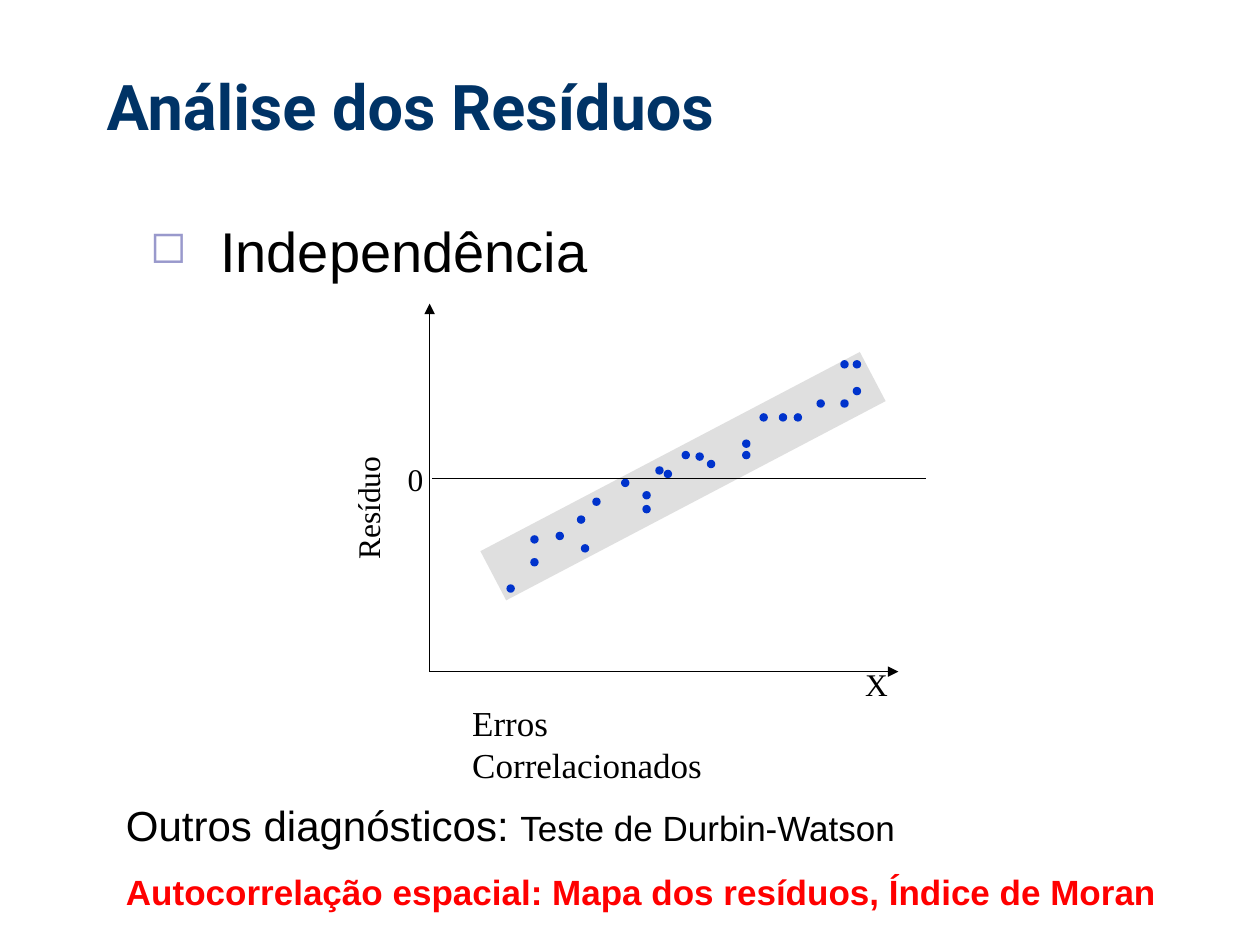
from lxml import etree
from pptx import Presentation
from pptx.dml.color import RGBColor
from pptx.enum import shapes, text
from pptx.oxml import ns
from pptx.util import Cm, Pt

NAVY = RGBColor(0x00, 0x33, 0x66)
LILAC = RGBColor(0x99, 0x99, 0xCC)
BLUE = RGBColor(0x00, 0x33, 0xCC)
GREY = RGBColor(0xC0, 0xC0, 0xC0)
RED = RGBColor(0xFF, 0x00, 0x00)
BLACK = RGBColor(0x00, 0x00, 0x00)
SERIF = "Times New Roman"
DOT = 0.17
RESIDUALS = [
    (2.54, 4.6), (4.29, 3.78), (2.03, 5.13), (4.29, 4.06), (8.28, 1.14),
    (3.86, 3.53), (4.55, 3.28), (4.72, 3.35), (5.08, 2.97), (7.04, 2.21),
    (3.28, 3.91), (7.34, 2.21), (2.03, 4.67), (5.36, 3.0), (8.28, 1.93),
    (8.53, 1.68), (8.53, 1.14), (6.3, 2.74), (6.65, 2.21), (6.3, 2.97),
    (5.59, 3.15), (2.97, 4.27), (7.8, 1.93), (3.05, 4.85), (1.55, 5.66),
]


def add_child(parent, tag, **attributes):
    return etree.SubElement(parent, ns.qn(tag), attributes)


def style(run, size, font, color=BLACK, bold=False):
    run.font.size = Pt(size)
    run.font.name = font
    run.font.color.rgb = color
    run.font.bold = bold


def add_text(slide, box, words, size, font, color=BLACK, bold=False, wrap=True):
    label = slide.shapes.add_textbox(*map(Cm, box))
    frame = label.text_frame
    frame.word_wrap = wrap
    frame.text = words
    style(frame.paragraphs[0].runs[0], size, font, color, bold)
    return label


def add_filled(slide, kind, box, color):
    shape = slide.shapes.add_shape(kind, *map(Cm, box))
    shape.shadow.inherit = False
    shape.fill.solid()
    shape.fill.fore_color.rgb = color
    shape.line.fill.background()
    return shape


def add_line(slide, start, end, arrow=False):
    line = slide.shapes.add_connector(
        shapes.MSO_CONNECTOR.STRAIGHT, *map(Cm, start + end))
    line.line.color.rgb = BLACK
    line.line.width = Pt(0.75)
    if arrow:
        add_child(line.line._get_or_add_ln(), "a:tailEnd", type="triangle")
    add_child(line._element.spPr, "a:effectLst")


def add_title(slide, box):
    title = add_text(slide, box, "Análise dos Resíduos", 36, "Roboto", NAVY, True)
    title.text_frame.vertical_anchor = text.MSO_ANCHOR.MIDDLE


def add_topic(slide, box):
    topic = add_text(slide, box, "Independência", 32, "Arial")
    properties = topic.text_frame.paragraphs[0]._p.get_or_add_pPr()
    properties.set("marL", str(Cm(2.69)))
    properties.set("indent", str(Cm(-1.42)))
    color = add_child(properties, "a:buClr")
    add_child(color, "a:srgbClr", val=str(LILAC))
    add_child(properties, "a:buSzPct", val="80000")
    add_child(properties, "a:buChar", char="◻")


def add_residual_plot(slide, box):
    left, top, width, height = box

    def place(x, y, *size):
        return (left + x, top + y) + size

    add_text(slide, place(8.53, 7.16, 0.97, 1.02), "X", 18, SERIF, wrap=False)
    band = add_filled(slide, shapes.MSO_SHAPE.RECTANGLE,
                      place(0.79, 2.92, 8.64, 1.12), GREY)
    band.rotation = 332.3
    add_child(band.fill._xPr.find(".//" + ns.qn("a:srgbClr")), "a:alpha", val="50000")
    for x, y in RESIDUALS:
        add_filled(slide, shapes.MSO_SHAPE.FLOWCHART_CONNECTOR,
                   place(x, y, DOT, DOT), BLUE)

    add_line(slide, place(0.05, 3.53), place(10.01, 3.53))
    add_line(slide, place(0, height), place(0, 0), arrow=True)
    add_line(slide, place(0, height), place(width, height), arrow=True)

    add_text(slide, place(-0.69, 3.02, 0.84, 1.02), "0", 18, SERIF, wrap=False)
    caption = add_text(slide, place(0.61, 7.9, 6.83, 1.09),
                       "Erros Correlacionados", 20, SERIF)
    caption.text_frame.margin_right = Cm(0.8)
    residual = add_text(slide, place(-2.87, 3.28, 3.25, 1.02), "Resíduo", 18, SERIF)
    residual.rotation = 270


def add_diagnostics(slide, box):
    diagnostics = add_text(slide, box, "Outros diagnósticos: ", 24, "Arial")
    first = diagnostics.text_frame.paragraphs[0]
    test = first.add_run()
    test.text = "Teste de Durbin-Watson"
    style(test, 20, "Arial")
    spatial = diagnostics.text_frame.add_paragraph()
    spatial.text = "Autocorrelação espacial: Mapa dos resíduos, Índice de Moran"
    spatial.space_before = Pt(11.5)
    style(spatial.runs[0], 20, "Arial", RED, True)


def main():
    deck = Presentation()
    deck.slide_width, deck.slide_height = Cm(25.4), Cm(19.05)
    slide = deck.slides.add_slide(deck.slide_layouts[6])
    add_title(slide, (1.9, 1.07, 22.66, 2.11))
    add_topic(slide, (1.5, 4.24, 22.96, 1.6))
    add_residual_plot(slide, (8.66, 6.12, 9.45, 7.42))
    add_diagnostics(slide, (2.29, 16, 22, 2.9))
    deck.save("out.pptx")


if __name__ == "__main__":
    main()
